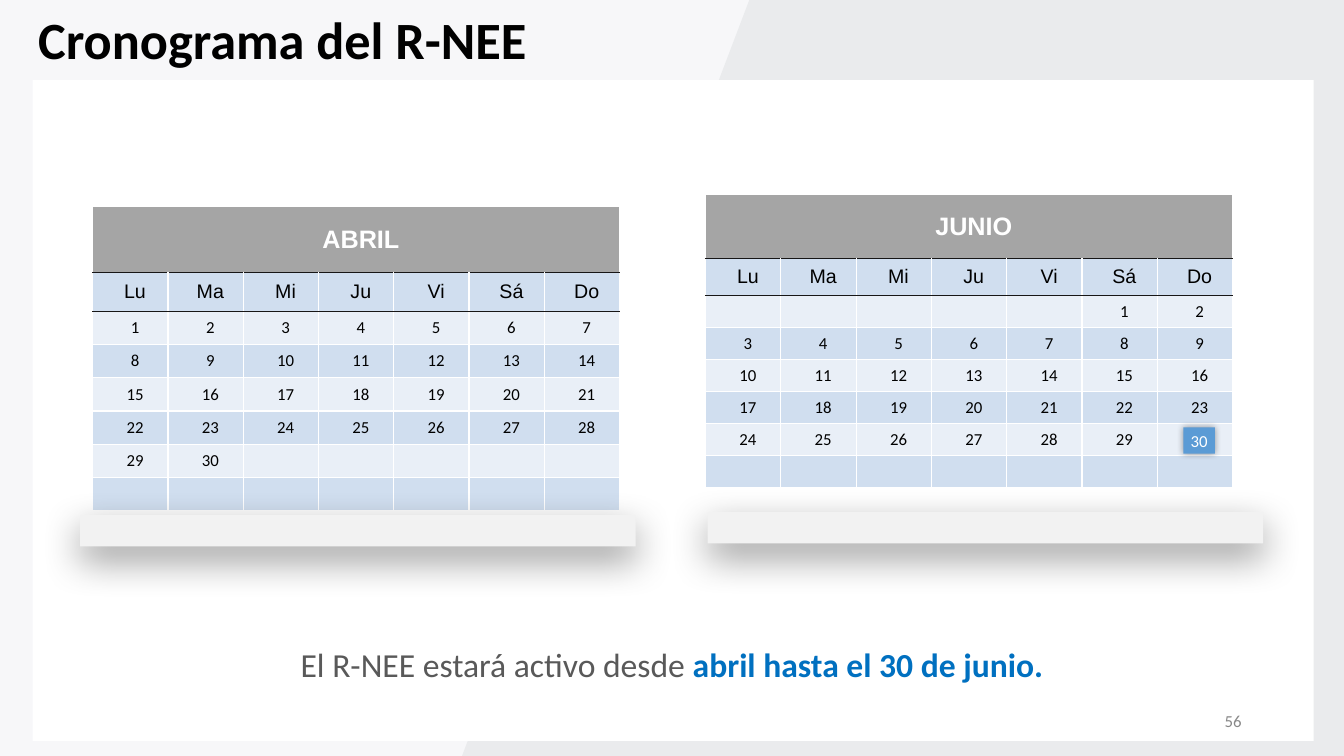
from lxml.etree import SubElement as Sub
from pptx import Presentation
from pptx.dml.color import RGBColor as RGB
from pptx.enum.shapes import MSO_SHAPE as Shape
from pptx.enum.text import MSO_ANCHOR as Anchor, MSO_AUTO_SIZE as Fit, PP_ALIGN as Align
from pptx.oxml import parse_xml
from pptx.oxml.ns import nsdecls, qn
from pptx.util import Pt

HUES = {"white": "FFFFFF", "black": "000000", "pale": "F7F7F9", "mist": "EAEBED",
        "head": "A5A5A5", "even": "E9EFF7", "odd": "D0DEEF", "rule": "171616",
        "shelf": "F2F2F2", "mark": "5B9BD5", "text": "595959", "link": "0070C0",
        "page": "888888"}


def block(kind, box, hue, blur=0, dist=0):
    """Add a filled shape; a blur above zero gives it a soft shadow below."""
    shape = slide.shapes.add_shape(kind, *map(Pt, box))
    shape.shadow.inherit = False
    shape.fill.solid()
    shape.fill.fore_color.rgb = RGB.from_string(HUES[hue])
    shape.line.fill.background()
    if blur:
        glow = shape._element.spPr.find(qn("a:effectLst"))
        glow.append(parse_xml(
            f'<a:outerShdw {nsdecls("a")} blurRad="{Pt(blur)}" dist="{Pt(dist)}" '
            'dir="5400000" algn="ctr" rotWithShape="0"><a:srgbClr val="000000">'
            '<a:alpha val="40000"/></a:srgbClr></a:outerShdw>'))
    return shape


def style(para, size, hue, font="Calibri", bold=False, align=Align.CENTER):
    para.alignment = align
    para.font.size, para.font.name, para.font.bold = Pt(size), font, bold
    para.font.color.rgb = RGB.from_string(HUES[hue])


deck = Presentation()
deck.slide_width, deck.slide_height = Pt(960), Pt(540)
slide = deck.slides.add_slide(deck.slide_layouts[5])

# Backdrop
block(Shape.RECTANGLE, (0, 0, 960, 540), "pale")
block(Shape.RECTANGLE, (574.5, 0, 385.5, 540), "mist")
slant = block(Shape.TRAPEZOID, (330, 0, 630, 540), "mist")
slant.adjustments[0] = 0.38
block(Shape.RECTANGLE, (23.3, 57.3, 915, 472), "white")

# Title
title = slide.shapes.title
slide.shapes._spTree.append(title._element)
title.left, title.top, title.width, title.height = map(Pt, (20, 13.5, 434, 39))
frame = title.text_frame
frame.text = "Cronograma del R-NEE"
frame.auto_size, frame.vertical_anchor = Fit.NONE, Anchor.MIDDLE
frame.paragraphs[0].line_spacing = 0.7
style(frame.paragraphs[0], 37.4, "black", bold=True, align=Align.LEFT)

# Calendars: name, left, top, row heights, blank days before the 1st, days in the grid
WEEK = ["Lu", "Ma", "Mi", "Ju", "Vi", "Sá", "Do"]
MONTHS = [("ABRIL", 66.2, 147.6, (47.2, 27.4, 23.8), 0, 30),
          ("JUNIO", 504, 139.2, (45.6, 26.4, 22.9), 5, 29)]
for name, left, top, (tall, mid, low), blank, last in MONTHS:
    highs = [tall, mid] + [low] * 6
    grid = slide.shapes.add_table(8, 7, Pt(left), Pt(top), Pt(376.6), Pt(sum(highs))).table
    grid.horz_banding = grid.first_row = False
    for col in grid.columns:
        col.width = Pt(53.8)
    for r, high in enumerate(highs):
        grid.rows[r].height = Pt(high)
        for c in range(7):
            cell = grid.cell(r, c)
            day = (r - 2) * 7 + c + 1 - blank
            if r == 0:
                text, look, hue = name if c == 0 else "", (18, "white", "Arial", True), "head"
            elif r == 1:
                text, look, hue = WEEK[c], (14, "black", "Arial"), "odd"
            else:
                text = str(day) if 1 <= day <= last else ""
                look, hue = (12, "black"), "odd" if r % 2 else "even"
            cell.text = text
            style(cell.text_frame.paragraphs[0], *look)
            cell.vertical_anchor = Anchor.MIDDLE
            cell.margin_left = Pt(6.75)
            cell.margin_right = cell.margin_top = cell.margin_bottom = 0
            cell.fill.solid()
            cell.fill.fore_color.rgb = RGB.from_string(HUES[hue])
            props = cell._tc.get_or_add_tcPr()
            for i, side in enumerate("LRTB"):
                dark = (side == "T" and r in (1, 2)) or (side == "B" and r < 2)
                edge = Sub(props, qn(f"a:ln{side}"), w=str(Pt(0.75 if dark else 1)))
                ink = Sub(edge, qn("a:solidFill"))
                Sub(ink, qn("a:srgbClr"), val=HUES["rule" if dark else "white"])
                props.insert(i, edge)
    grid.cell(0, 0).merge(grid.cell(0, 6))

# Shelves under the calendars and the marked last day
for left, top in [(505.5, 365.8), (57.3, 367.9)]:
    block(Shape.RECTANGLE, (left, top, 396.7, 22.3), "shelf", 28, 10)
mark = block(Shape.RECTANGLE, (845.3, 305.3, 22.6, 18.7), "mark", 5)
frame = mark.text_frame
frame.margin_left = frame.margin_right = 0
frame.vertical_anchor = Anchor.MIDDLE
frame.text = "30"
style(frame.paragraphs[0], 12, "white")

# Closing line and page number
NOTES = [((103, 451, 754, 46), ["El R-NEE estará activo desde ", "abril hasta el 30 de junio."],
          (24, "text")),
         ((678, 500.5, 216, 28.8), ["56"], (12, "page", "Calibri", False, Align.RIGHT))]
for box, parts, look in NOTES:
    frame = slide.shapes.add_textbox(*map(Pt, box)).text_frame
    frame.word_wrap, frame.vertical_anchor = True, Anchor.MIDDLE
    para = frame.paragraphs[0]
    style(para, *look)
    for part in parts:
        run = para.add_run()
        run.text = part
        if part.startswith("abril"):
            run.font.bold = True
            run.font.color.rgb = RGB.from_string(HUES["link"])

deck.save("out.pptx")
